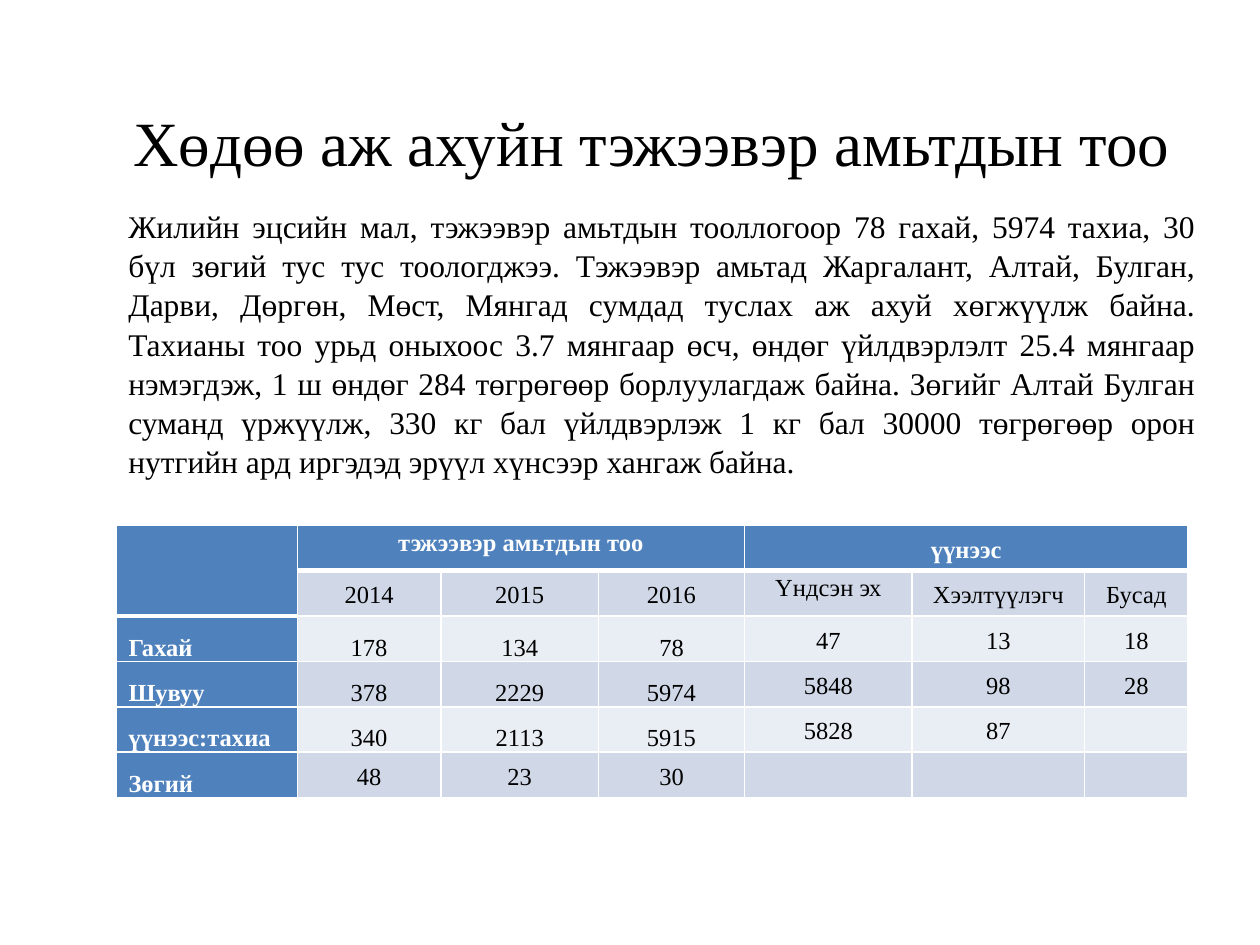
from dataclasses import dataclass
from typing import Any

import pptx
import pptx.dml.color
import pptx.enum.text
import pptx.oxml
import pptx.oxml.ns
import pptx.util

Inches = pptx.util.Inches
Pt = pptx.util.Pt
RGB = pptx.dml.color.RGBColor.from_string
ALIGN = pptx.enum.text.PP_ALIGN
ANCHOR = pptx.enum.text.MSO_ANCHOR


@dataclass(frozen=True)
class Theme:
    font: str = "Times New Roman"
    black: str = "000000"
    white: str = "FFFFFF"
    header: str = "4F81BD"
    bands: tuple[str, str] = ("E9EDF4", "D0D8E8")
    title_size: float = 36
    body_size: float = 18
    table_size: float = 14
    thin: float = 1
    thick: float = 3


@dataclass(frozen=True)
class TextBox:
    text: str
    box: tuple[float, float, float, float]
    size: float
    align: Any
    anchor: Any
    line_spacing: float


@dataclass(frozen=True)
class CellStyle:
    fill: str
    color: str
    bold: bool
    align: Any
    anchor: Any


THEME = Theme()

TEXTS = [
    TextBox("Хөдөө аж ахуйн тэжээвэр амьтдын тоо", (0.67, 0.5, 9, 1.25),
            THEME.title_size, ALIGN.CENTER, ANCHOR.MIDDLE, 1.0),
    TextBox("Жилийн эцсийн мал, тэжээвэр амьтдын тооллогоор 78 гахай, 5974 тахиа, "
            "30 бүл зөгий тус тус тоологджээ. Тэжээвэр амьтад Жаргалант, Алтай, "
            "Булган, Дарви, Дөргөн, Мөст, Мянгад сумдад туслах аж ахуй хөгжүүлж "
            "байна. Тахианы тоо урьд оныхоос 3.7 мянгаар өсч, өндөг үйлдвэрлэлт "
            "25.4 мянгаар нэмэгдэж, 1 ш өндөг 284 төгрөгөөр борлуулагдаж байна. "
            "Зөгийг Алтай Булган суманд үржүүлж, 330 кг бал үйлдвэрлэж 1 кг бал "
            "30000 төгрөгөөр орон нутгийн ард иргэдэд эрүүл хүнсээр хангаж байна.",
            (0.92, 1.58, 8.67, 2.33),
            THEME.body_size, ALIGN.JUSTIFY, ANCHOR.TOP, 1.04),
]

COL_WIDTHS = [1.44, 1.14, 1.25, 1.16, 1.33, 1.37, 0.82]
ROW_HEIGHT = 0.36
ROWS = [
    ["", "тэжээвэр амьтдын тоо", "", "", "үүнээс", "", ""],
    ["", "2014", "2015", "2016", "Үндсэн эх", "Хээлтүүлэгч", "Бусад"],
    ["Гахай", "178", "134", "78", "47", "13", "18"],
    ["Шувуу", "378", "2229", "5974", "5848", "98", "28"],
    ["үүнээс:тахиа", "340", "2113", "5915", "5828", "87", ""],
    ["Зөгий", "48", "23", "30", "", "", ""],
]
MERGES = [((0, 0), (1, 0)), ((0, 1), (0, 3)), ((0, 4), (0, 6))]
TOP_CELLS = {(0, 1), (1, 4)}


def apply(obj: Any, values: dict[str, Any]) -> None:
    for name, value in values.items():
        setattr(obj, name, value)


def write(p: Any, text: str, size: float, color: str, bold: bool,
          align: Any, line_spacing: float) -> None:
    apply(p, {"alignment": align, "line_spacing": line_spacing})
    if text:
        r = p.add_run()
        r.text = text
        apply(r.font, {"name": THEME.font, "size": Pt(size), "bold": bold})
        r.font.color.rgb = RGB(color)


def add_text(s: Any, item: TextBox) -> None:
    tf = s.shapes.add_textbox(*map(Inches, item.box)).text_frame
    apply(tf, {"word_wrap": True, "vertical_anchor": item.anchor})
    write(tf.paragraphs[0], item.text, item.size, THEME.black, False,
          item.align, item.line_spacing)


def style_for(row: int, col: int) -> CellStyle:
    heading = row == 0 or col == 0
    if (row, col) in TOP_CELLS:
        anchor = ANCHOR.TOP
    elif row >= 2 and (col == 0 or (col <= 3 and row < 5)):
        anchor = ANCHOR.BOTTOM
    else:
        anchor = ANCHOR.MIDDLE
    return CellStyle(
        fill=THEME.header if heading else THEME.bands[row % 2],
        color=THEME.white if heading else THEME.black,
        bold=heading,
        align=ALIGN.JUSTIFY if col == 0 else ALIGN.CENTER,
        anchor=anchor,
    )


def add_borders(cell: Any, row: int, col: int) -> None:
    header_end = 1 if col == 0 else 0
    widths = {
        "lnL": THEME.thin,
        "lnR": THEME.thin,
        "lnT": THEME.thick if row == header_end + 1 else THEME.thin,
        "lnB": THEME.thick if row == header_end else THEME.thin,
    }
    tc_pr = cell._tc.get_or_add_tcPr()
    for tag, width in widths.items():
        tc_pr.append(pptx.oxml.parse_xml(
            f'<a:{tag} {pptx.oxml.ns.nsdecls("a")} w="{Pt(width)}">'
            f'<a:solidFill><a:srgbClr val="{THEME.white}"/></a:solidFill></a:{tag}>'))


def add_animal_table(s: Any, left: float, top: float) -> None:
    table = s.shapes.add_table(
        len(ROWS), len(COL_WIDTHS), Inches(left), Inches(top),
        Inches(sum(COL_WIDTHS)), Inches(ROW_HEIGHT * len(ROWS))).table
    apply(table, {"first_row": False, "horz_banding": False})
    for column, width in zip(table.columns, COL_WIDTHS):
        column.width = Inches(width)
    for row, texts in enumerate(ROWS):
        table.rows[row].height = Inches(ROW_HEIGHT)
        for col, text in enumerate(texts):
            cell, style = table.cell(row, col), style_for(row, col)
            add_borders(cell, row, col)
            cell.fill.solid()
            cell.fill.fore_color.rgb = RGB(style.fill)
            apply(cell, {"margin_left": Inches(0.1), "margin_right": Inches(0.1),
                         "margin_top": 0, "margin_bottom": 0,
                         "vertical_anchor": style.anchor})
            write(cell.text_frame.paragraphs[0], text, THEME.table_size,
                  style.color, style.bold, style.align, 1.15)
    for first, last in MERGES:
        table.cell(*first).merge(table.cell(*last))


def main() -> None:
    prs = pptx.Presentation()
    apply(prs, {"slide_width": Inches(10), "slide_height": Inches(7.5)})
    s = prs.slides.add_slide(prs.slide_layouts[6])
    for item in TEXTS:
        add_text(s, item)
    add_animal_table(s, 0.92, 4.17)
    prs.save("out.pptx")


if __name__ == "__main__":
    main()
